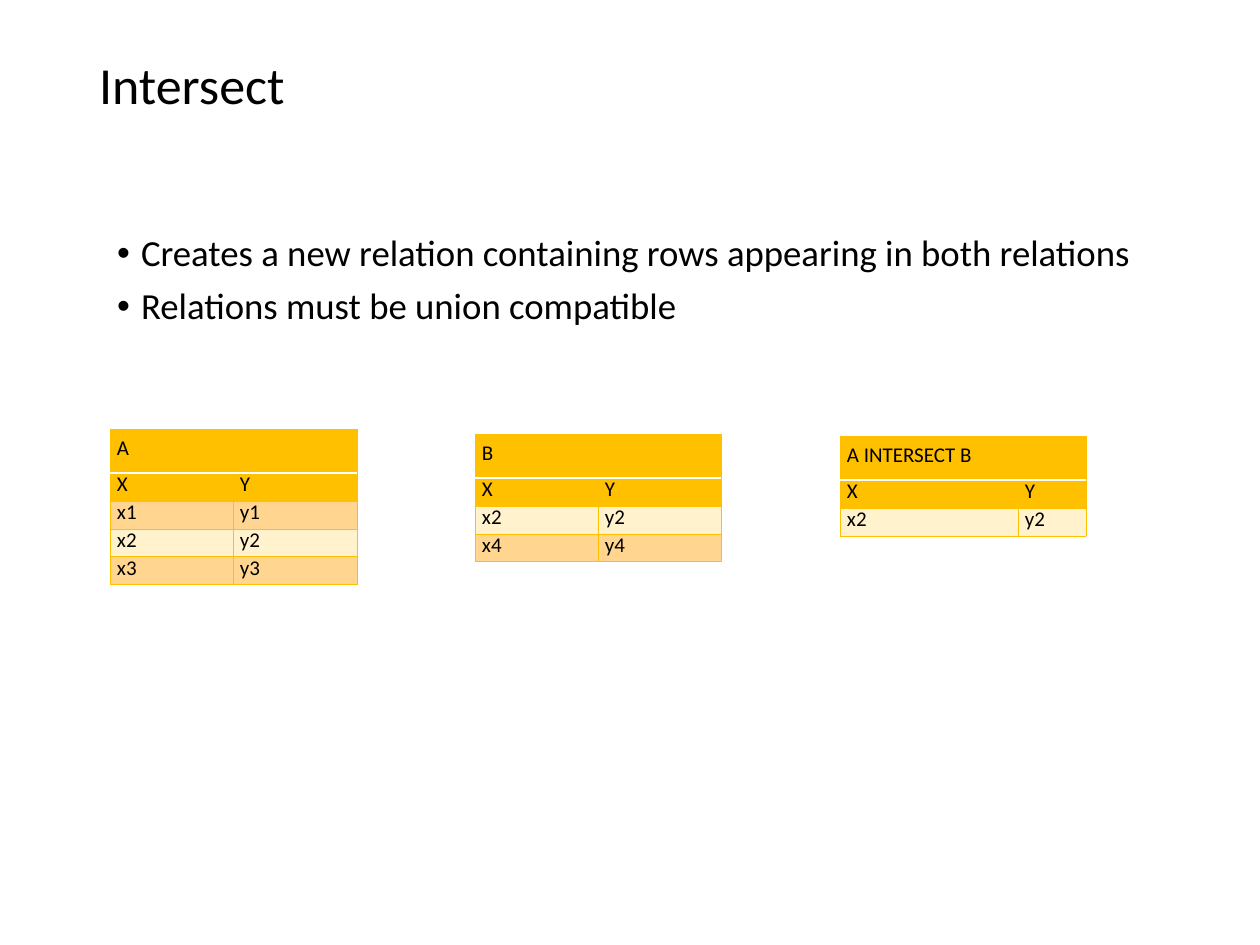
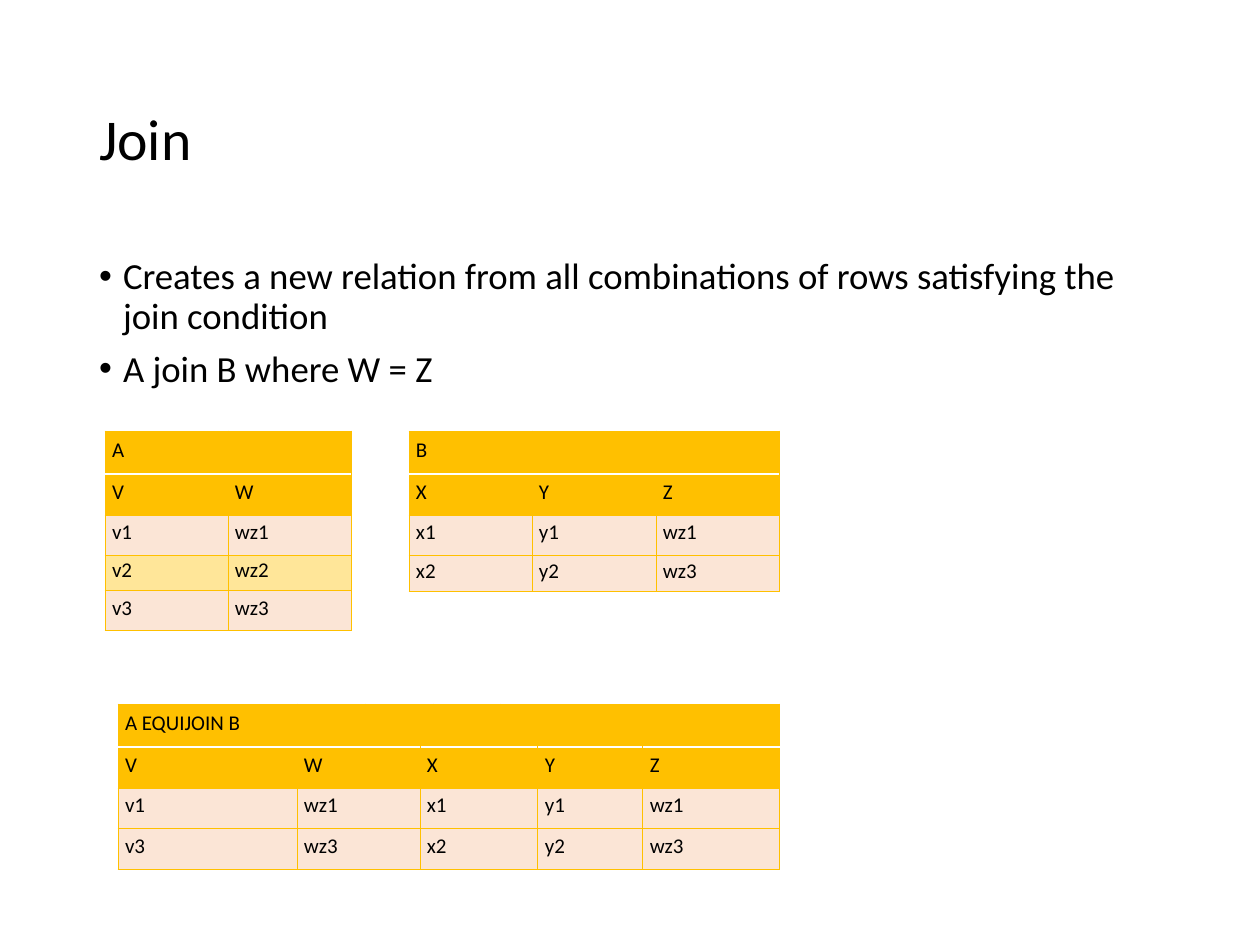
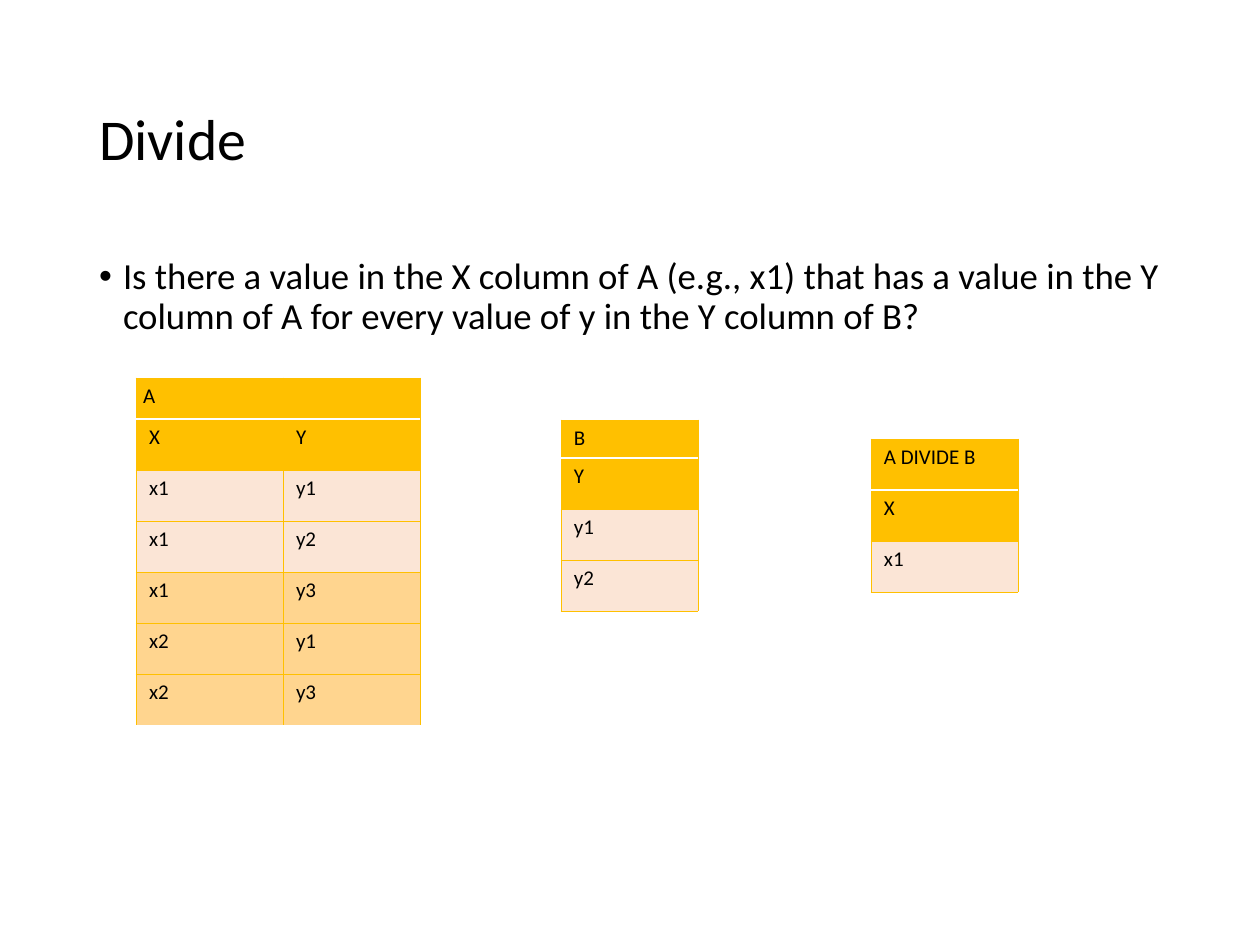
from dataclasses import dataclass
from typing import Optional

from lxml import etree
from pptx import Presentation
from pptx.dml.color import RGBColor
from pptx.enum.text import MSO_ANCHOR, MSO_AUTO_SIZE, PP_ALIGN
from pptx.oxml.ns import qn
from pptx.util import Emu, Pt

MIDDLE, TOP = MSO_ANCHOR.MIDDLE, MSO_ANCHOR.TOP
LEFT = PP_ALIGN.LEFT
NO_AUTOFIT = MSO_AUTO_SIZE.NONE

# Shared look
PX_PER_INCH = 126
FONT = "Calibri"
BLACK, WHITE, GOLD = "000000", "FFFFFF", "FFC000"
AMBER, CREAM, PEACH, YELLOW = "FFD58F", "FFF2CC", "FBE5D6", "FFE699"
TITLE_ONLY = 5
BULLET_INDENT = 24
FRAME_INSET = 12
VERTICAL_INSET = 6
CELL_WIDE, CELL_NARROW = 13, 7


@dataclass(frozen=True)
class CellStyle:
    side_inset: int
    anchor: MSO_ANCHOR
    line_spacing: float


TIGHT = CellStyle(CELL_NARROW, MIDDLE, 0.6)
ROOMY = CellStyle(CELL_WIDE, TOP, 1.0)


@dataclass(frozen=True)
class Row:
    height: int
    fill: str
    values: str


@dataclass(frozen=True)
class Relation:
    left: int
    top: int
    columns: list[int]
    name: str
    name_height: int
    rows: list[Row]
    style: CellStyle = TIGHT
    name_inset: Optional[int] = None
    open_bottom: bool = False
    name_spans: Optional[list[int]] = None
    row_spans: Optional[list[int]] = None


@dataclass(frozen=True)
class Operation:
    title: str
    title_size: float
    title_height: int
    bullets_box: tuple[int, int, int, int]
    bullets: list[str]
    relations: list[Relation]


def px(length: int) -> Emu:
    return Emu(round(length * 914400 / PX_PER_INCH))


def color(hex_code: str) -> RGBColor:
    return RGBColor.from_string(hex_code)


def add_run(paragraph, text: str, size: float) -> None:
    run = paragraph.add_run()
    run.text = text
    run.font.name = FONT
    run.font.size = Pt(size)
    run.font.bold = False
    run.font.color.rgb = color(BLACK)


def set_frame(frame, anchor: MSO_ANCHOR) -> None:
    frame.word_wrap = True
    frame.auto_size = NO_AUTOFIT
    frame.vertical_anchor = anchor
    frame.margin_left = frame.margin_right = px(FRAME_INSET)
    frame.margin_top = frame.margin_bottom = px(VERTICAL_INSET)


def add_title(slide, operation: Operation) -> None:
    title = slide.shapes.title
    title.left, title.top = px(87), px(50)
    title.width, title.height = px(1087), px(operation.title_height)
    set_frame(title.text_frame, MIDDLE)
    paragraph = title.text_frame.paragraphs[0]
    paragraph.alignment = LEFT
    paragraph.line_spacing = 0.9
    add_run(paragraph, operation.title, operation.title_size)


def add_bullets(slide, operation: Operation) -> None:
    box = slide.shapes.add_textbox(*map(px, operation.bullets_box))
    frame = box.text_frame
    set_frame(frame, TOP)
    for index, text in enumerate(operation.bullets):
        paragraph = frame.add_paragraph() if index else frame.paragraphs[0]
        paragraph.line_spacing = 0.9
        paragraph.space_before = Pt(7.5)
        properties = paragraph._p.get_or_add_pPr()
        properties.set("marL", str(px(BULLET_INDENT)))
        properties.set("indent", str(-px(BULLET_INDENT)))
        etree.SubElement(properties, qn("a:buFont")).set("typeface", "Arial")
        etree.SubElement(properties, qn("a:buChar")).set("char", "•")
        add_run(paragraph, text, 21)


def set_border(cell, side: str, hex_code: Optional[str], points: float = 0.5) -> None:
    properties = cell._tc.get_or_add_tcPr()
    line = etree.SubElement(properties, qn(f"a:ln{side}"), w=str(Pt(points)))
    if hex_code is None:
        etree.SubElement(line, qn("a:noFill"))
    else:
        fill = etree.SubElement(line, qn("a:solidFill"))
        etree.SubElement(fill, qn("a:srgbClr")).set("val", hex_code)


def fill_cell(cell, text: str, fill: str, style: CellStyle, inset: int) -> None:
    cell.fill.solid()
    cell.fill.fore_color.rgb = color(fill)
    cell.vertical_anchor = style.anchor
    cell.margin_left = cell.margin_right = px(inset)
    cell.margin_top = cell.margin_bottom = px(VERTICAL_INSET)
    paragraph = cell.text_frame.paragraphs[0]
    paragraph.line_spacing = style.line_spacing
    if text:
        add_run(paragraph, text, 12)
    else:
        etree.SubElement(paragraph._p, qn("a:endParaRPr")).set("sz", "1200")


def spread(values: list[str], spans: list[int]) -> list[str]:
    """Put each value in the first column of its span."""
    cells = []
    for value, span in zip(values, spans):
        cells += [value] + [""] * (span - 1)
    return cells


def add_relation(slide, relation: Relation) -> None:
    count = len(relation.columns)
    name_spans = relation.name_spans or [1] * count
    row_spans = relation.row_spans or [1] * count
    name_row = [relation.name] + [""] * (len(name_spans) - 1)
    grid = [(relation.name_height, GOLD, name_row, name_spans)]
    grid += [(row.height, row.fill, row.values.split(), row_spans)
             for row in relation.rows]
    table = slide.shapes.add_table(
        len(grid), count, px(relation.left), px(relation.top),
        px(sum(relation.columns)), px(sum(line[0] for line in grid)),
    ).table
    table.first_row = table.horz_banding = False
    for column, width in zip(table.columns, relation.columns):
        column.width = px(width)

    last = len(grid) - 1
    for r, (height, fill, values, spans) in enumerate(grid):
        table.rows[r].height = px(height)
        for c, text in enumerate(spread(values, spans)):
            cell = table.cell(r, c)
            # Borders come before the fill in the cell's properties
            set_border(cell, "L", GOLD)
            set_border(cell, "R", GOLD)
            set_border(cell, "T", *((WHITE, 1) if r == 1 else (GOLD, 0.5)))
            if r == 0:
                set_border(cell, "B", WHITE, 1)
            else:
                is_open = relation.open_bottom and r == last
                set_border(cell, "B", None if is_open else GOLD)
            inset = relation.style.side_inset
            if r == 0 and relation.name_inset is not None:
                inset = relation.name_inset
            fill_cell(cell, text, fill, relation.style, inset)
        start = 0
        for span in spans:
            if span > 1:
                table.cell(r, start).merge(table.cell(r, start + span - 1))
            start += span


# Content
PAIR = [123, 123]

INTERSECT = Operation(
    "Intersect", 29.7, 75, (105, 229, 1087, 244),
    ["Creates a new relation containing rows appearing in both relations",
     "Relations must be union compatible"],
    [
        Relation(110, 429, [123, 124], "A", 44, [
            Row(28, GOLD, "X Y"), Row(28, AMBER, "x1 y1"),
            Row(28, CREAM, "x2 y2"), Row(28, AMBER, "x3 y3")]),
        Relation(475, 434, PAIR, "B", 44, [
            Row(28, GOLD, "X Y"), Row(28, CREAM, "x2 y2"),
            Row(28, AMBER, "x4 y4")]),
        Relation(840, 436, [178, 68], "A INTERSECT B", 44, [
            Row(28, GOLD, "X Y"), Row(28, CREAM, "x2 y2")]),
    ],
)

JOIN = Operation(
    "Join", 33, 183, (87, 252, 1087, 600),
    ["Creates a new relation from all combinations of rows satisfying the join condition",
     "A join B where W = Z"],
    [
        Relation(105, 431, PAIR, "A", 43, [
            Row(41, GOLD, "V W"), Row(40, PEACH, "v1 wz1"),
            Row(36, YELLOW, "v2 wz2"), Row(40, PEACH, "v3 wz3")]),
        Relation(409, 431, [123, 124, 123], "B", 43, [
            Row(41, GOLD, "X Y Z"), Row(40, PEACH, "x1 y1 wz1"),
            Row(37, PEACH, "x2 y2 wz3")]),
        Relation(118, 704, [179, 68, 55, 13, 68, 37, 105, 137], "A EQUIJOIN B", 43, [
            Row(41, GOLD, "V W X Y Z"), Row(40, PEACH, "v1 wz1 x1 y1 wz1"),
            Row(41, PEACH, "v3 wz3 x2 y2 wz3")],
            name_spans=[1, 1, 2, 1, 3], row_spans=[1, 2, 3, 1, 1]),
    ],
)

DIVIDE = Operation(
    "Divide", 33, 183, (87, 252, 1087, 600),
    ["Is there a value in the X column of A (e.g., x1) that has a value in the Y "
     "column of A for every value of y in the Y column of B?"],
    [
        Relation(136, 378, [147, 137], "A", 41, [
            Row(51, GOLD, "X Y"), Row(51, PEACH, "x1 y1"),
            Row(51, PEACH, "x1 y2"), Row(51, AMBER, "x1 y3"),
            Row(51, AMBER, "x2 y1"), Row(51, AMBER, "x2 y3")],
            ROOMY, name_inset=CELL_NARROW, open_bottom=True),
        Relation(561, 420, [137], "B", 38, [
            Row(51, GOLD, "Y"), Row(51, PEACH, "y1"), Row(51, PEACH, "y2")], ROOMY),
        Relation(871, 439, [147], "A DIVIDE B", 51, [
            Row(51, GOLD, "X"), Row(51, PEACH, "x1")], ROOMY),
    ],
)


def main() -> None:
    deck = Presentation()
    deck.slide_width, deck.slide_height = px(1260), px(945)
    for operation in (INTERSECT, JOIN, DIVIDE):
        slide = deck.slides.add_slide(deck.slide_layouts[TITLE_ONLY])
        add_title(slide, operation)
        add_bullets(slide, operation)
        for relation in operation.relations:
            add_relation(slide, relation)
    deck.save("out.pptx")


if __name__ == "__main__":
    main()
